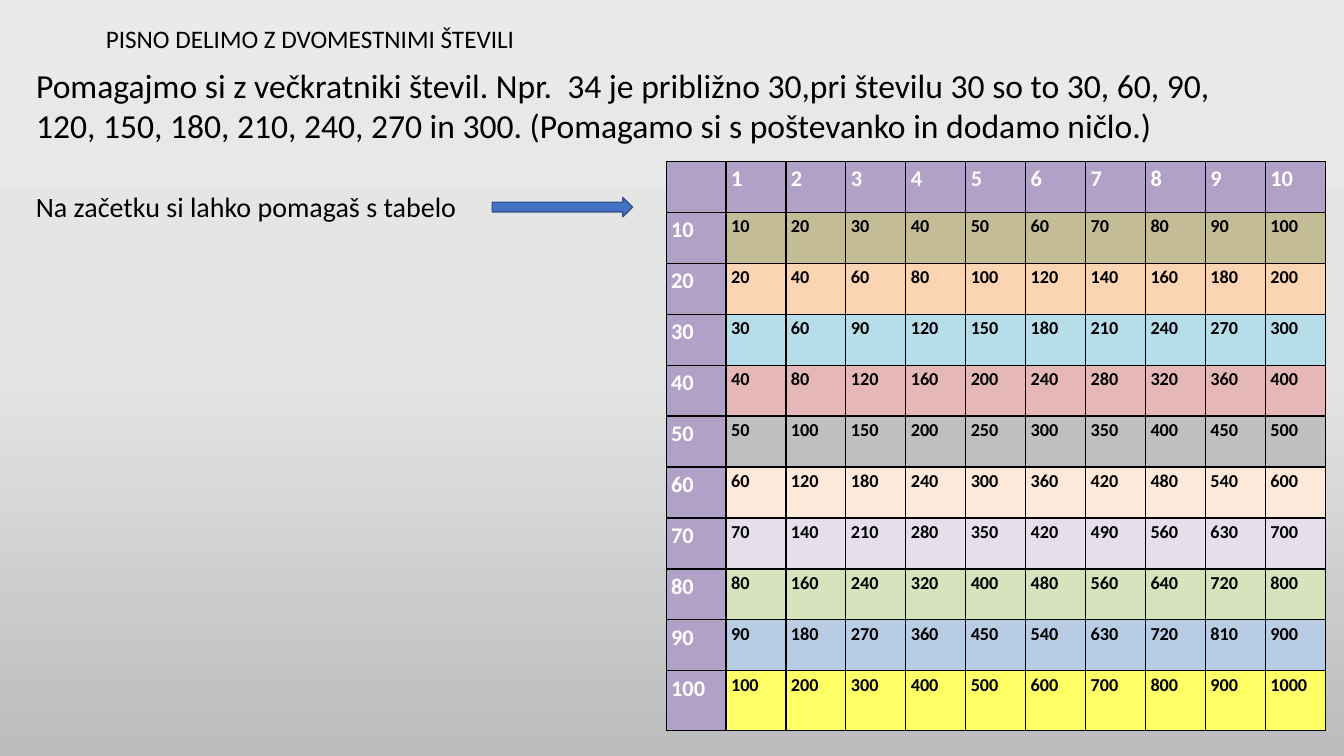
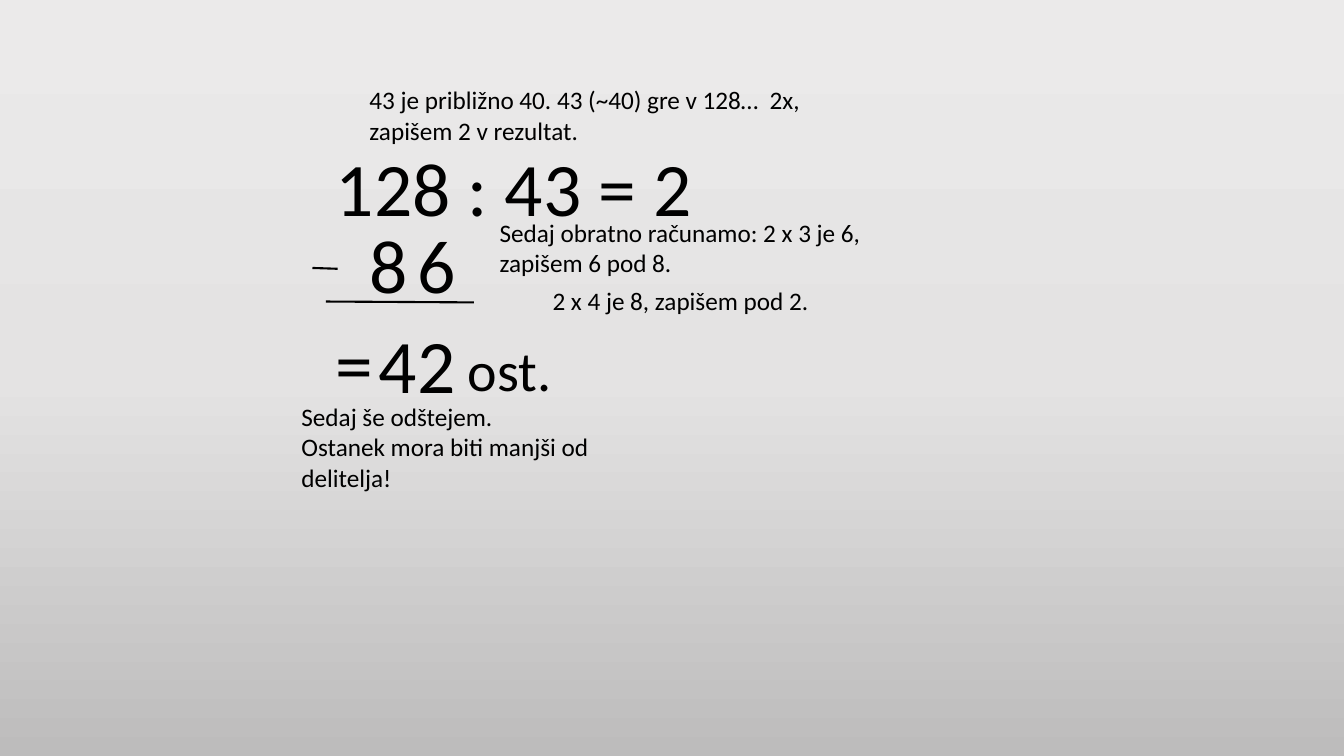
from copy import deepcopy
from dataclasses import dataclass

from lxml.etree import SubElement
from pptx import Presentation
from pptx.dml.color import RGBColor
from pptx.enum.shapes import MSO_CONNECTOR, MSO_SHAPE
from pptx.enum.text import MSO_ANCHOR, MSO_AUTO_SIZE, PP_ALIGN
from pptx.oxml.ns import qn
from pptx.util import Emu, Inches, Pt

# The slide is a grid of 160 columns by 90 rows, twelve cells to the inch.
COLS, ROWS = 160, 90
CELL = Inches(1) / 12
FONT = "Calibri"
COLORS = {
    "text": "000000",
    "header": "B2A1C7",
    "header_text": "FFFFFF",
    "arrow": "4472C4",
    "arrow_line": "325491",
}
BACKGROUND = [(0, "EBEAEA"), (0.5, "E4E3E3"), (1, "BDBCBC")]
ROW_FILLS = ["C4BC96", "FBD4B4", "B6DDE8", "E5B8B7", "BFBFBF",
             "FDE9D9", "E5DFEC", "D6E3BC", "B8CCE4", "FFFF66"]


@dataclass(frozen=True)
class Box:
    """A rectangle in grid cells."""
    col: float
    row: float
    width: float
    height: float

    def emu(self) -> list[Emu]:
        return [cells(n) for n in (self.col, self.row, self.width, self.height)]


@dataclass(frozen=True)
class Label:
    text: str
    box: Box
    size: float = 18


@dataclass(frozen=True)
class Rule:
    """A line from one grid point to another."""
    start: tuple[float, float]
    end: tuple[float, float]


TITLE = Label("PISNO DELIMO Z DVOMESTNIMI ŠTEVILI", Box(11.4, 2.2, 77.9, 4.8))
INTRO = Label(
    "Pomagajmo si z večkratniki števil. Npr.  34 je približno 30,pri številu 30 "
    "so to 30, 60, 90, 120, 150, 180, 210, 240, 270 in 300. "
    "(Pomagamo si s poštevanko in dodamo ničlo.)",
    Box(3.1, 7.1, 144.1, 10.9), 24)
TABLE_HINT = Label("Na začetku si lahko pomagaš s tabelo", Box(3.1, 22, 53.3, 5.3), 20)
ARROW = Box(58.6, 23.5, 16.7, 2.3)
TABLE = Box(79.3, 19.2, 78.5, 67.8)
TABLE_ROW = 6.07


def digit(text: str, col: float, row: float) -> Label:
    return Label(text, Box(col, row, 7, 12.1), 54)


DIVISION = [
    Label("128 : 43 =", Box(38.8, 16.2, 39.1, 12.1), 54),
    digit("2", 76.6, 16.2),
    digit("6", 48.5, 25.3),
    digit("8", 42.8, 25.3),
    digit("2", 48.5, 37.2),
    digit("4", 43.9, 37.2),
    digit("=", 38.8, 37.1),
    Label("ost.", Box(54.5, 39.4, 16.1, 9.2), 40),
]
EXPLANATIONS = [
    Label("43 je približno 40. 43 (~40) gre v 128…  2x, zapišem 2 v rezultat.",
          Box(42.8, 9.5, 60.1, 8.5)),
    Label("Sedaj obratno računamo: 2 x 3 je 6, zapišem 6 pod 8.",
          Box(58.3, 25.3, 49.1, 8.5)),
    Label("Sedaj še odštejem.\nOstanek mora biti manjši od delitelja!",
          Box(34.7, 47.2, 38.3, 12.1)),
    Label("2 x 4 je 8, zapišem pod 2.", Box(64.6, 33.4, 42.7, 4.8)),
]
RULES = [Rule((38.8, 35.9), (56.4, 36)), Rule((37.2, 31.9), (40.2, 32))]


def cells(n: float) -> Emu:
    return Emu(round(n * CELL))


def rgb(name: str) -> RGBColor:
    return RGBColor.from_string(COLORS.get(name, name))


def style_run(r, size: float, color: str = "text", bold: bool = False) -> None:
    r.font.name, r.font.size, r.font.bold = FONT, Pt(size), bold
    r.font.color.rgb = rgb(color)


def set_background(master) -> None:
    fill = master.background.fill
    fill.gradient()
    fill.gradient_angle = 270
    stop_list = next(master.element.cSld.iter(qn("a:gsLst")))
    stop_list.append(deepcopy(stop_list[0]))
    for stop, (position, color) in zip(fill.gradient_stops, BACKGROUND):
        stop.position = position
        stop.color.rgb = rgb(color)


def fill_label(shape, label: Label) -> None:
    """Place a text box or placeholder and write the label in it."""
    shape.left, shape.top, shape.width, shape.height = label.box.emu()
    tf = shape.text_frame
    tf.text = label.text
    tf.word_wrap = True
    tf.auto_size = MSO_AUTO_SIZE.NONE
    tf.vertical_anchor = MSO_ANCHOR.TOP
    for p in tf.paragraphs:
        p.alignment = PP_ALIGN.LEFT
        p.line_spacing, p.space_before = 1.0, Pt(0)
        for r in p.runs:
            style_run(r, label.size)


def remove_bullets(shape) -> None:
    for p in shape.text_frame.paragraphs:
        props = p._p.get_or_add_pPr()
        props.set("marL", "0")
        props.set("indent", "0")
        SubElement(props, qn("a:buNone"))


def add_label(s, label: Label) -> None:
    fill_label(s.shapes.add_textbox(*label.box.emu()), label)


def add_rule(s, rule: Rule) -> None:
    ends = [cells(n) for n in (*rule.start, *rule.end)]
    line = s.shapes.add_connector(MSO_CONNECTOR.STRAIGHT, *ends)
    line.line.color.rgb = rgb("text")
    line.line.width = Pt(1.5)
    SubElement(line._element.spPr, qn("a:effectLst"))


def add_arrow(s, box: Box) -> None:
    sp = s.shapes.add_shape(MSO_SHAPE.RIGHT_ARROW, *box.emu())
    sp.shadow.inherit = False
    sp.fill.solid()
    sp.fill.fore_color.rgb = rgb("arrow")
    sp.line.color.rgb = rgb("arrow_line")
    sp.line.width = Pt(1)


def set_borders(cell) -> None:
    props = cell._tc.get_or_add_tcPr()
    for i, side in enumerate(("a:lnL", "a:lnR", "a:lnT", "a:lnB")):
        line = props.makeelement(qn(side), {"w": str(Pt(1))})
        fill = SubElement(line, qn("a:solidFill"))
        SubElement(fill, qn("a:srgbClr"), val=COLORS["text"])
        props.insert(i, line)


def format_cell(cell, text: str, fill: str, header: bool) -> None:
    cell.margin_left = cell.margin_right = Inches(0.05)
    cell.margin_top = cell.margin_bottom = 0
    cell.fill.solid()
    cell.fill.fore_color.rgb = rgb(fill)
    set_borders(cell)
    cell.text_frame.text = text
    p = cell.text_frame.paragraphs[0]
    p.line_spacing = 1.15
    for r in p.runs:
        style_run(r, 16 if header else 13, "header_text" if header else "text", True)


def add_multiples_table(s, box: Box) -> None:
    """Tens down the side, factors along the top, products inside."""
    n = len(ROW_FILLS) + 1
    table = s.shapes.add_table(n, n, *box.emu()).table
    table.first_row = table.horz_banding = False
    for column in table.columns:
        column.width = cells(box.width / n)
    for row in table.rows:
        row.height = cells(TABLE_ROW)
    table.rows[n - 1].height = cells(box.height - (n - 1) * TABLE_ROW)
    for i in range(n):
        for j in range(n):
            header = i == 0 or j == 0
            value = 10 * i * j if not header else 10 * i or j
            fill = "header" if header else ROW_FILLS[i - 1]
            format_cell(table.cell(i, j), str(value or ""), fill, header)


def build_multiples_slide(prs) -> None:
    s = prs.slides.add_slide(prs.slide_layouts.get_by_name("Title and Content"))
    fill_label(s.shapes.title, TITLE)
    body = s.placeholders[1]
    fill_label(body, INTRO)
    remove_bullets(body)
    add_multiples_table(s, TABLE)
    add_label(s, TABLE_HINT)
    add_arrow(s, ARROW)


def build_division_slide(prs) -> None:
    s = prs.slides.add_slide(prs.slide_layouts.get_by_name("Blank"))
    for label in DIVISION + EXPLANATIONS:
        add_label(s, label)
    for rule in RULES:
        add_rule(s, rule)


def main() -> None:
    prs = Presentation()
    prs.slide_width, prs.slide_height = cells(COLS), cells(ROWS)
    set_background(prs.slide_master)
    build_multiples_slide(prs)
    build_division_slide(prs)
    prs.save("out.pptx")


if __name__ == "__main__":
    main()
